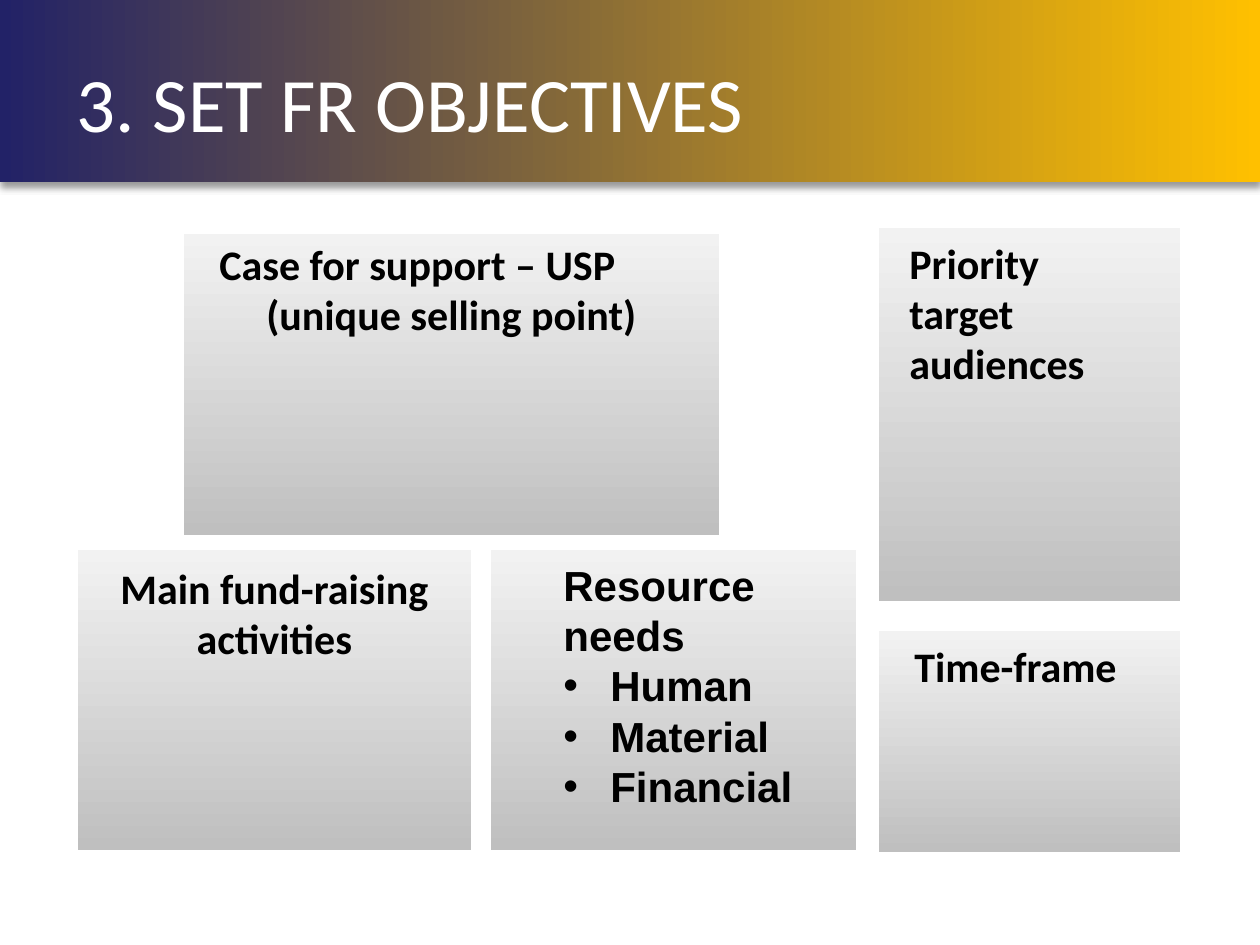
from typing import NamedTuple

from lxml import etree
from pptx import Presentation
from pptx import util as u
from pptx.dml.color import RGBColor
from pptx.enum import shapes, text
from pptx.oxml import ns

PX = 914400 / 126
LEFT = text.PP_ALIGN.LEFT
CENTER = text.PP_ALIGN.CENTER
JUSTIFY = text.PP_ALIGN.JUSTIFY


class Box(NamedTuple):
    left: int
    top: int
    width: int
    height: int


class Line(NamedTuple):
    words: str
    align: text.PP_ALIGN = LEFT
    margin: int = 0
    indent: int = 0
    bullet: str = ""


class Label(NamedTuple):
    box: Box
    lines: list[Line]
    font: str = "Calibri"
    size: int = 24
    color: str = "000000"
    bold: bool = True
    title: bool = False


HEADER = Box(0, 0, 1260, 182)
PANELS = [
    Box(184, 234, 535, 301),   # case for support
    Box(78, 550, 393, 300),    # activities
    Box(491, 550, 365, 300),   # resources
    Box(879, 228, 301, 373),   # audiences
    Box(879, 631, 301, 221),   # time-frame
]
RESOURCES = [Line(word, JUSTIFY, 47, -47, "•") for word in ("Human", "Material", "Financial")]
LABELS = [
    Label(Box(77, 19, 1159, 166), [Line("3. SET FR OBJECTIVES")],
          size=44, color="FFFFFF", bold=False, title=True),
    Label(Box(203, 232, 466, 115),
          [Line("Case for support – USP (unique selling point)", LEFT, 51, -47)]),
    Label(Box(78, 556, 393, 115), [Line("Main fund-raising activities", CENTER)]),
    Label(Box(551, 553, 281, 267), [Line("Resource needs", JUSTIFY), *RESOURCES], font="Arial"),
    Label(Box(902, 634, 252, 64), [Line("Time-frame")]),
    Label(Box(897, 231, 252, 165), [Line("Priority target audiences")]),
]


def px(length: int) -> int:
    return round(length * PX)


def rgb(value: str) -> RGBColor:
    return RGBColor.from_string(value)


def add_gradient_box(slide, box: Box, start: str, end: str, angle: int):
    """Draw a borderless rectangle; the angle runs counter-clockwise."""
    shape = slide.shapes.add_shape(shapes.MSO_SHAPE.RECTANGLE, *map(px, box))
    shape.shadow.inherit = False
    shape.line.fill.background()
    shape.fill.gradient()
    shape.fill.gradient_angle = angle
    for stop, color, position in zip(shape.fill.gradient_stops, (start, end), (0, 1)):
        stop.color.rgb = rgb(color)
        stop.position = position
    return shape


def add_drop_shadow(shape) -> None:
    effects = shape.element.spPr.find(ns.qn("a:effectLst"))
    shadow = etree.SubElement(
        effects, ns.qn("a:outerShdw"), blurRad=str(u.Pt(4)), dist=str(u.Pt(3)),
        dir="5400000", algn="t", rotWithShape="0")
    color = etree.SubElement(shadow, ns.qn("a:srgbClr"), val="000000")
    etree.SubElement(color, ns.qn("a:alpha"), val="40000")


def indent_paragraph(paragraph, line: Line) -> None:
    properties = paragraph._p.get_or_add_pPr()
    properties.set("marL", str(px(line.margin)))
    properties.set("indent", str(px(line.indent)))
    if line.bullet:
        etree.SubElement(properties, ns.qn("a:buFont"), typeface="Arial")
        etree.SubElement(properties, ns.qn("a:buChar"), char=line.bullet)


def add_label(slide, label: Label) -> None:
    frame = slide.shapes.add_textbox(*map(px, label.box)).text_frame
    frame.word_wrap = True
    if label.title:
        frame.vertical_anchor = text.MSO_ANCHOR.MIDDLE
        frame.margin_left = frame.margin_right = 0
        frame.margin_top = frame.margin_bottom = 0
    else:
        frame.auto_size = text.MSO_AUTO_SIZE.SHAPE_TO_FIT_TEXT
    for index, line in enumerate(label.lines):
        paragraph = frame.add_paragraph() if index else frame.paragraphs[0]
        paragraph.alignment = line.align
        indent_paragraph(paragraph, line)
        run = paragraph.add_run()
        run.text = line.words
        run.font.name = label.font
        run.font.size = u.Pt(label.size)
        run.font.bold = label.bold
        run.font.color.rgb = rgb(label.color)


def main() -> None:
    presentation = Presentation()
    presentation.slide_width = px(1260)
    presentation.slide_height = px(945)
    slide = presentation.slides.add_slide(presentation.slide_layouts[6])
    add_drop_shadow(add_gradient_box(slide, HEADER, "222267", "FFC000", 0))
    for panel in PANELS:
        add_gradient_box(slide, panel, "BFBFBF", "F2F2F2", 90)
    for label in LABELS:
        add_label(slide, label)
    presentation.save("out.pptx")


if __name__ == "__main__":
    main()
